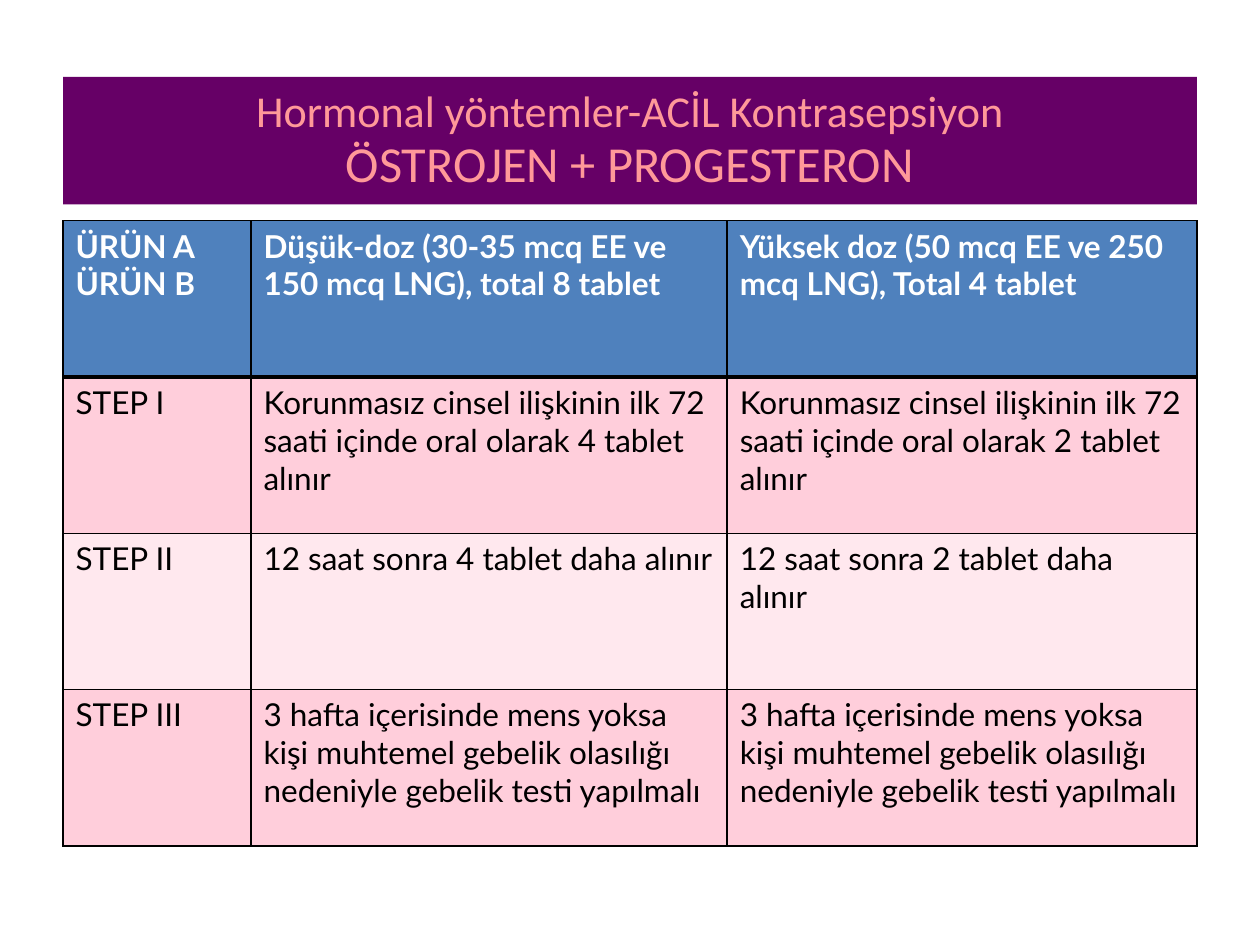
"""Build a slide with a title band and a table of emergency contraception steps."""
from lxml import etree
from pptx import Presentation
from pptx.dml.color import RGBColor
from pptx.enum.text import MSO_ANCHOR, MSO_AUTO_SIZE, PP_ALIGN
from pptx.oxml.ns import qn
from pptx.util import Cm, Pt

MIDDLE = MSO_ANCHOR.MIDDLE
CENTER = PP_ALIGN.CENTER
FIXED = MSO_AUTO_SIZE.NONE

PURPLE = RGBColor(0x66, 0x00, 0x66)
SALMON = RGBColor(0xFF, 0x99, 0x99)
BLUE = RGBColor(0x4F, 0x81, 0xBD)
PINK = RGBColor(0xFF, 0xCE, 0xDB)
PALE = RGBColor(0xFF, 0xE8, 0xEE)
WHITE = RGBColor(0xFF, 0xFF, 0xFF)
BLACK = RGBColor(0x00, 0x00, 0x00)

TEST = "3 hafta içerisinde mens yoksa kişi muhtemel gebelik olasılığı nedeniyle gebelik testi yapılmalı"
ROWS = [
    ["ÜRÜN A\nÜRÜN B",
     "Düşük-doz (30-35 mcq EE ve 150 mcq LNG), total 8 tablet",
     "Yüksek doz (50 mcq EE ve 250 mcq LNG), Total 4 tablet"],
    ["STEP I",
     "Korunmasız cinsel ilişkinin ilk 72 saati içinde oral olarak 4 tablet alınır",
     "Korunmasız cinsel ilişkinin ilk 72 saati içinde oral olarak 2 tablet alınır"],
    ["STEP II",
     "12 saat sonra 4 tablet daha alınır",
     "12 saat sonra 2 tablet daha alınır"],
    ["STEP III", TEST, TEST],
]
FILLS = [BLUE, PINK, PALE, PINK]
WIDTHS = [3.79, 9.6, 9.47]
HEIGHT = 3.15


def write(para, text, font="Lato", size=18, color=BLACK, bold=False):
    run = para.add_run()
    run.text = text
    run.font.name = font
    run.font.size = Pt(size)
    run.font.color.rgb = color
    run.font.bold = bold


def border(cell, side, width):
    props = cell._tc.get_or_add_tcPr()
    line = etree.SubElement(props, qn("a:ln" + side), w=str(Pt(width)))
    fill = etree.SubElement(line, qn("a:solidFill"))
    etree.SubElement(fill, qn("a:srgbClr"), val=str(BLACK))


deck = Presentation()
deck.slide_width, deck.slide_height = Cm(25.4), Cm(19.05)
slide = deck.slides.add_slide(deck.slide_layouts[5])

title = slide.shapes.title
title.left, title.top = Cm(1.27), Cm(1.55)
title.width, title.height = Cm(22.86), Cm(2.57)
title.fill.solid()
title.fill.fore_color.rgb = PURPLE
frame = title.text_frame
frame.auto_size = FIXED
frame.vertical_anchor = MIDDLE
para = frame.paragraphs[0]
para.alignment = CENTER
para.line_spacing = 0.94
write(para, "Hormonal yöntemler-ACİL Kontrasepsiyon", font="Calibri", size=25.2, color=SALMON)
para.add_line_break()
write(para, "ÖSTROJEN + PROGESTERON", font="Calibri", size=28.8, color=SALMON)

table = slide.shapes.add_table(
    len(ROWS), len(WIDTHS), Cm(1.27), Cm(4.45), Cm(sum(WIDTHS)), Cm(HEIGHT * len(ROWS))
).table
for col, width in zip(table.columns, WIDTHS):
    col.width = Cm(width)
for row, texts in enumerate(ROWS):
    table.rows[row].height = Cm(HEIGHT)
    head = row == 0
    for col, text in enumerate(texts):
        cell = table.cell(row, col)
        for side in "LRTB":
            thick = (row, side) in [(0, "B"), (1, "T")]
            border(cell, side, 3 if thick else 1)
        cell.fill.solid()
        cell.fill.fore_color.rgb = FILLS[row]
        for place, line in enumerate(text.split("\n")):
            frame = cell.text_frame
            para = frame.add_paragraph() if place else frame.paragraphs[0]
            write(para, line, color=WHITE if head else BLACK, bold=head)

deck.save("out.pptx")
